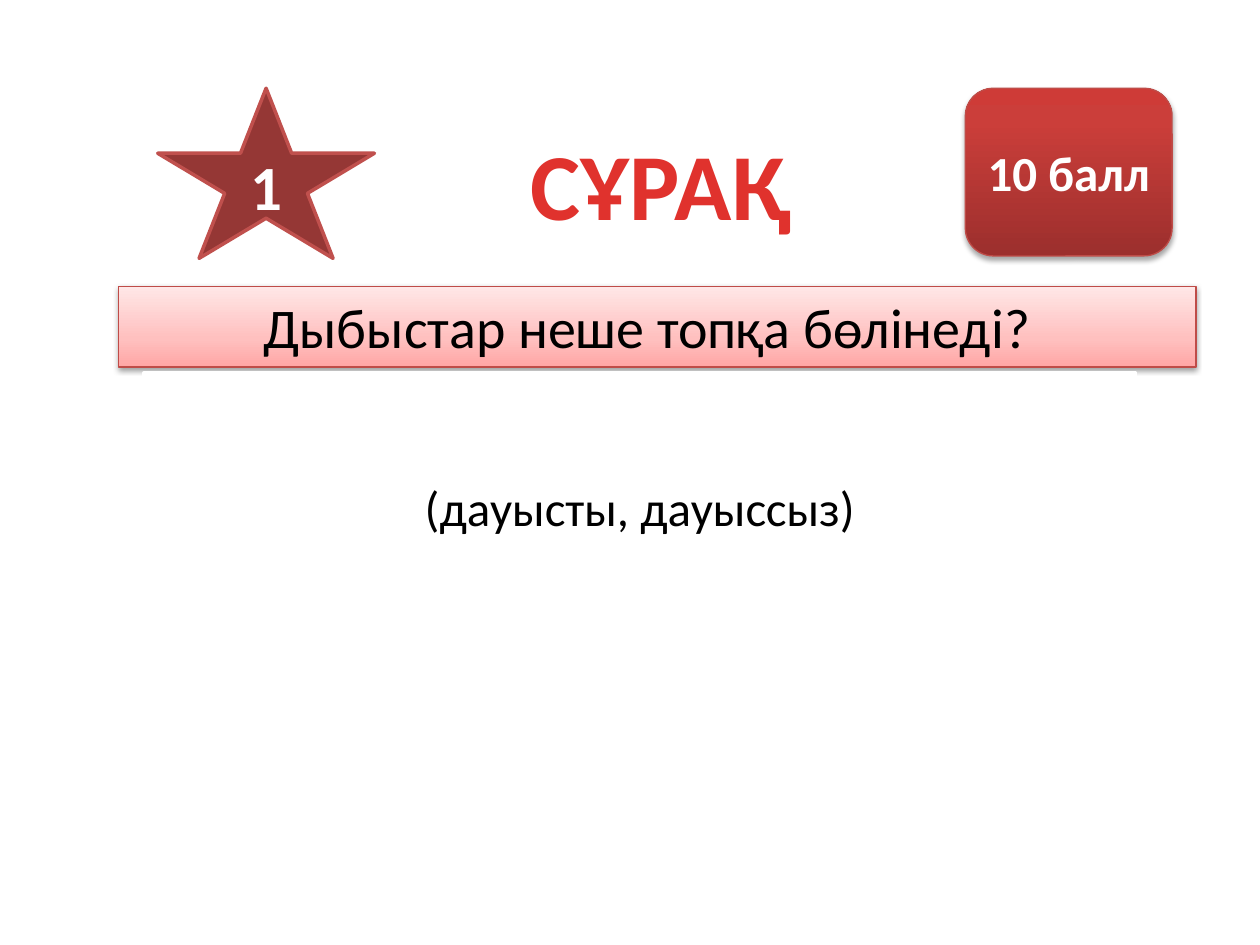
import lxml.etree
import pptx
import pptx.dml.color
import pptx.enum.shapes
import pptx.enum.text
import pptx.oxml.ns
import pptx.util

Cm = pptx.util.Cm
Pt = pptx.util.Pt
qn = pptx.oxml.ns.qn
SHAPES = pptx.enum.shapes.MSO_SHAPE
ANCHOR = pptx.enum.text.MSO_ANCHOR


def color(value):
    return pptx.dml.color.RGBColor.from_string(value)


def write_text(shape, text, size, text_color, bold):
    frame = shape.text_frame
    frame.word_wrap = True
    frame.vertical_anchor = ANCHOR.MIDDLE
    paragraph = frame.paragraphs[0]
    paragraph.text = text
    paragraph.alignment = pptx.enum.text.PP_ALIGN.CENTER
    paragraph.font.name = "Calibri"
    paragraph.font.size = Pt(size)
    paragraph.font.bold = bold
    paragraph.font.color.rgb = color(text_color)


presentation = pptx.Presentation()
presentation.slide_width = Cm(25.4)
presentation.slide_height = Cm(19.05)
slide = presentation.slides.add_slide(presentation.slide_layouts[5])

title = slide.shapes.title
title.left, title.top, title.width, title.height = Cm(10.36), Cm(2.39), Cm(5.9), Cm(2.57)
write_text(title, "СҰРАҚ", 54, "E0322D", True)
title.text_frame.word_wrap = False

pink_stops = [(0, "FFA6A5"), (35, "FFC0BF"), (100, "FFE7E7")]
red_stops = [(0, "9C2F2D"), (80, "CB3E3A"), (100, "CE3B37")]
gradient_boxes = [
    (SHAPES.RECTANGLE, (2.39, 5.77, 21.72, 1.63), pink_stops, 38, 1.6,
     "Дыбыстар неше топқа бөлінеді?", 32, "000000", False),
    (SHAPES.ROUNDED_RECTANGLE, (19.46, 1.78, 4.17, 3.38), red_stops, 35, 1.8,
     "10 балл", 28, "FFFFFF", True),
]
for kind, place, stops, opacity, distance, text, size, text_color, bold in gradient_boxes:
    shape = slide.shapes.add_shape(kind, *map(Cm, place))
    shape.fill.gradient()
    shape.fill.gradient_angle = 90
    stop_list = shape.element.spPr.find(".//" + qn("a:gsLst"))
    for stop in list(stop_list):
        stop_list.remove(stop)
    for position, value in stops:
        stop = lxml.etree.SubElement(stop_list, qn("a:gs"), pos=str(position * 1000))
        lxml.etree.SubElement(stop, qn("a:srgbClr"), val=value)
    shape.line.color.rgb = color("BF4C48")
    shape.line.width = Pt(0.75)
    shape.shadow.inherit = False
    effects = shape.element.spPr.find(qn("a:effectLst"))
    shadow = lxml.etree.SubElement(
        effects, qn("a:outerShdw"), blurRad=str(Pt(3.1)), dist=str(Pt(distance)),
        dir="5400000", rotWithShape="0")
    shadow_color = lxml.etree.SubElement(shadow, qn("a:srgbClr"), val="000000")
    lxml.etree.SubElement(shadow_color, qn("a:alpha"), val=str(opacity * 1000))
    write_text(shape, text, size, text_color, bold)
    if kind == SHAPES.RECTANGLE:
        shape.text_frame.vertical_anchor = ANCHOR.TOP
        shape.text_frame.margin_right = Cm(0.65)

plain_shapes = [
    (SHAPES.RECTANGLE, (2.9, 7.52, 19.99, 6.76), "FFFFFF", "FFFFFF",
     "(дауысты, дауыссыз)", 28, "000000", False, 1.5),
    (SHAPES.STAR_5_POINT, (3.18, 1.78, 4.37, 3.43), "953735", "C0504D",
     "1", 36, "FFFFFF", True, 0.13),
]
for kind, place, fill, line, text, size, text_color, bold, margin_bottom in plain_shapes:
    shape = slide.shapes.add_shape(kind, *map(Cm, place))
    shape.fill.solid()
    shape.fill.fore_color.rgb = color(fill)
    shape.line.color.rgb = color(line)
    shape.line.width = Pt(2)
    shape.shadow.inherit = False
    write_text(shape, text, size, text_color, bold)
    shape.text_frame.margin_bottom = Cm(margin_bottom)

presentation.save("out.pptx")
